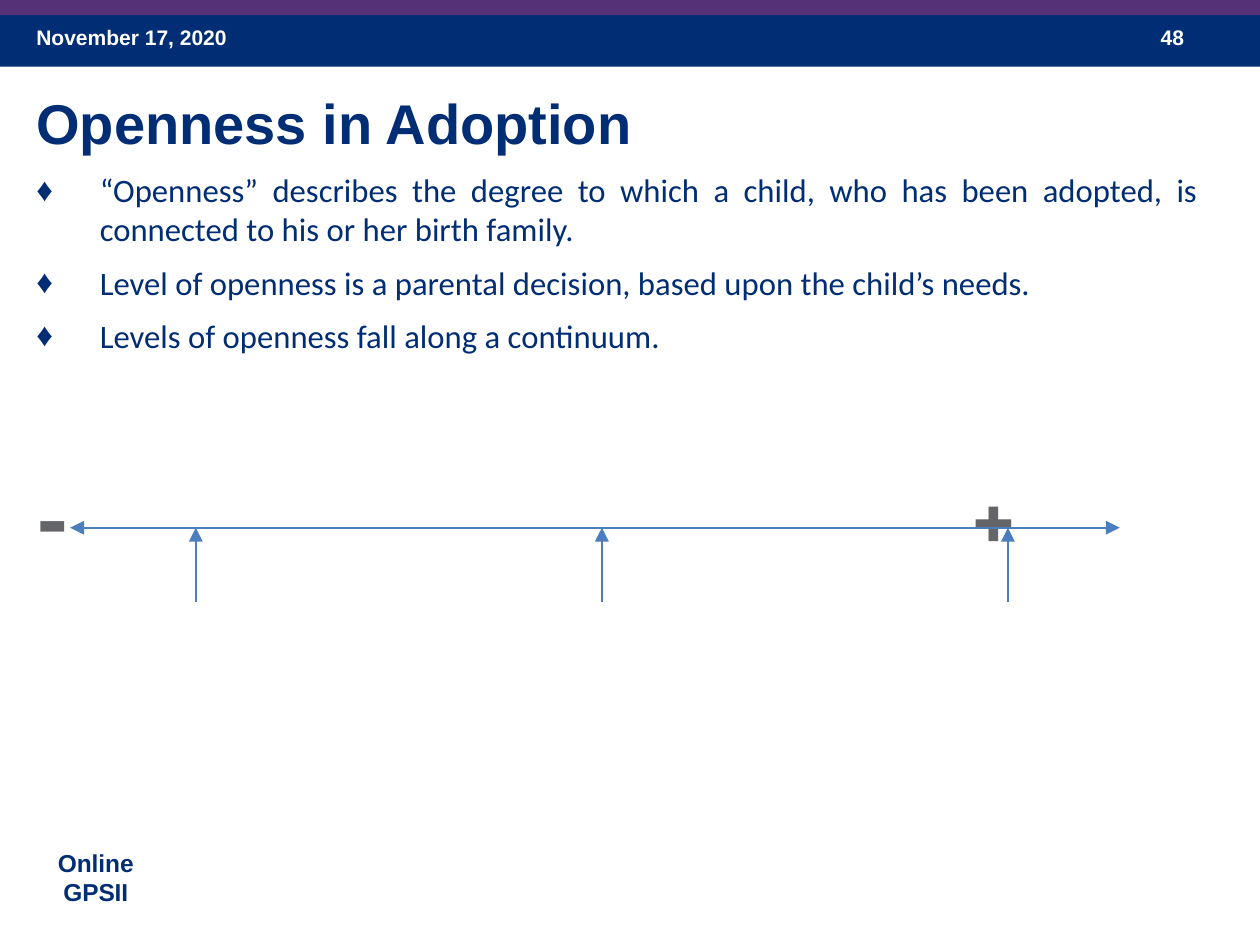
from dataclasses import dataclass

from lxml import etree
from pptx import Presentation
from pptx import util as u
from pptx.dml.color import RGBColor
from pptx.enum import shapes, text
from pptx.oxml import ns


@dataclass(frozen=True)
class Theme:
    """Colours, fonts and type sizes of the slide."""
    navy: str = "002D73"
    purple: str = "553278"
    white: str = "FFFFFF"
    grey: str = "646569"
    blue: str = "4B7EBC"
    head_font: str = "Arial"
    body_font: str = "Calibri"
    sign_font: str = "Montserrat"
    title: float = 24
    body: float = 14
    header: float = 9
    footer: float = 10.5
    minus: float = 36
    plus: float = 32


T = Theme()


def add_xml(parent, tag, **attrs):
    """Append a DrawingML element and return it."""
    return etree.SubElement(parent, ns.qn(tag), attrs)


def add_bar(s, top, height, color):
    """Add a full-width coloured bar."""
    sp = s.shapes.add_shape(shapes.MSO_SHAPE.RECTANGLE, 0, u.Cm(top), u.Cm(19.05), u.Cm(height))
    sp.shadow.inherit = False
    sp.fill.solid()
    sp.fill.fore_color.rgb = RGBColor.from_string(color)
    sp.line.fill.background()


def add_box(s, left, top, width, height):
    """Add a wrapping text box and return its text frame."""
    tf = s.shapes.add_textbox(u.Cm(left), u.Cm(top), u.Cm(width), u.Cm(height)).text_frame
    tf.word_wrap = True
    return tf


def add_run(p, words, size, color, font=T.head_font, bold=True):
    """Add one styled run to a paragraph."""
    r = p.add_run()
    r.text = words
    r.font.size = u.Pt(size)
    r.font.name = font
    r.font.bold = bold
    r.font.color.rgb = RGBColor.from_string(color)


def add_bullet(tf, words):
    """Add a justified paragraph with a diamond bullet."""
    p = tf.add_paragraph()
    pPr = p._p.get_or_add_pPr()
    indent = u.Cm(0.96)
    pPr.set("marL", str(indent))
    pPr.set("indent", str(-indent))
    add_xml(pPr, "a:buFont", typeface=T.head_font)
    add_xml(pPr, "a:buChar", char="♦")
    p.alignment = text.PP_ALIGN.JUSTIFY
    p.space_before = u.Pt(6)
    add_run(p, words, T.body, T.navy, T.body_font, False)


def add_arrow(s, x1, y1, x2, y2, double=False):
    """Add a thin line with an arrowhead at its end, or at both ends."""
    c = s.shapes.add_connector(shapes.MSO_CONNECTOR.STRAIGHT, u.Cm(x1), u.Cm(y1), u.Cm(x2), u.Cm(y2))
    c.line.color.rgb = RGBColor.from_string(T.blue)
    c.line.width = u.Pt(0.75)
    ln = c.line._get_or_add_ln()
    if double:
        add_xml(ln, "a:headEnd", type="triangle")
    add_xml(ln, "a:tailEnd", type="triangle")
    add_xml(c._element.spPr, "a:effectLst")


def add_header(s):
    """Add the top bars, date and page number."""
    add_bar(s, 0.18, 0.83, T.navy)
    add_bar(s, 0, 0.23, T.purple)
    for words, left, width in (("November 17, 2020", 0.3, 4.45), ("48", 17.3, 1.42)):
        tf = add_box(s, left, 0.25, width, 0.76)
        add_run(tf.paragraphs[0], words, T.header, T.white)


def add_footer(s):
    """Add the centred two-line course label."""
    tf = add_box(s, 0.56, 12.7, 1.78, 1.02)
    for p, words in zip((tf.paragraphs[0], tf.add_paragraph()), ("Online", "GPSII")):
        p.alignment = text.PP_ALIGN.CENTER
        add_run(p, words, T.footer, T.navy)


def add_body(s):
    """Add the heading and its bullets."""
    tf = add_box(s, 0.3, 1.22, 18.08, 4.3)
    add_run(tf.paragraphs[0], "Openness in Adoption", T.title, T.navy)
    for words in (
        "“Openness” describes the degree to which a child, who has been adopted, "
        "is connected to his or her birth family.",
        "Level of openness is a parental decision, based upon the child’s needs.",
        "Levels of openness fall along a continuum.",
    ):
        add_bullet(tf, words)


def add_continuum(s):
    """Add the minus-to-plus axis with three evenly spaced pointers."""
    tf = add_box(s, 0.3, 6.82, 18.08, 2)
    tf.vertical_anchor = text.MSO_ANCHOR.MIDDLE
    p = tf.paragraphs[0]
    tabs = add_xml(p._p.get_or_add_pPr(), "a:tabLst")
    add_xml(tabs, "a:tab", pos=str(u.Cm(14.14)), algn="l")
    add_run(p, "-\t", T.minus, T.grey, T.sign_font)
    add_run(p, "+", T.plus, T.grey, T.sign_font)
    axis = 7.98
    add_arrow(s, 1.06, axis, 16.93, axis, double=True)
    for i in range(3):
        x = 2.96 + i * 6.14
        add_arrow(s, x, 9.1, x, axis)


def main():
    """Build and save the slide."""
    prs = Presentation()
    prs.slide_width, prs.slide_height = u.Cm(19.05), u.Cm(14.29)
    s = prs.slides.add_slide(prs.slide_layouts[6])
    add_header(s)
    add_footer(s)
    add_body(s)
    add_continuum(s)
    prs.save("out.pptx")


if __name__ == "__main__":
    main()
